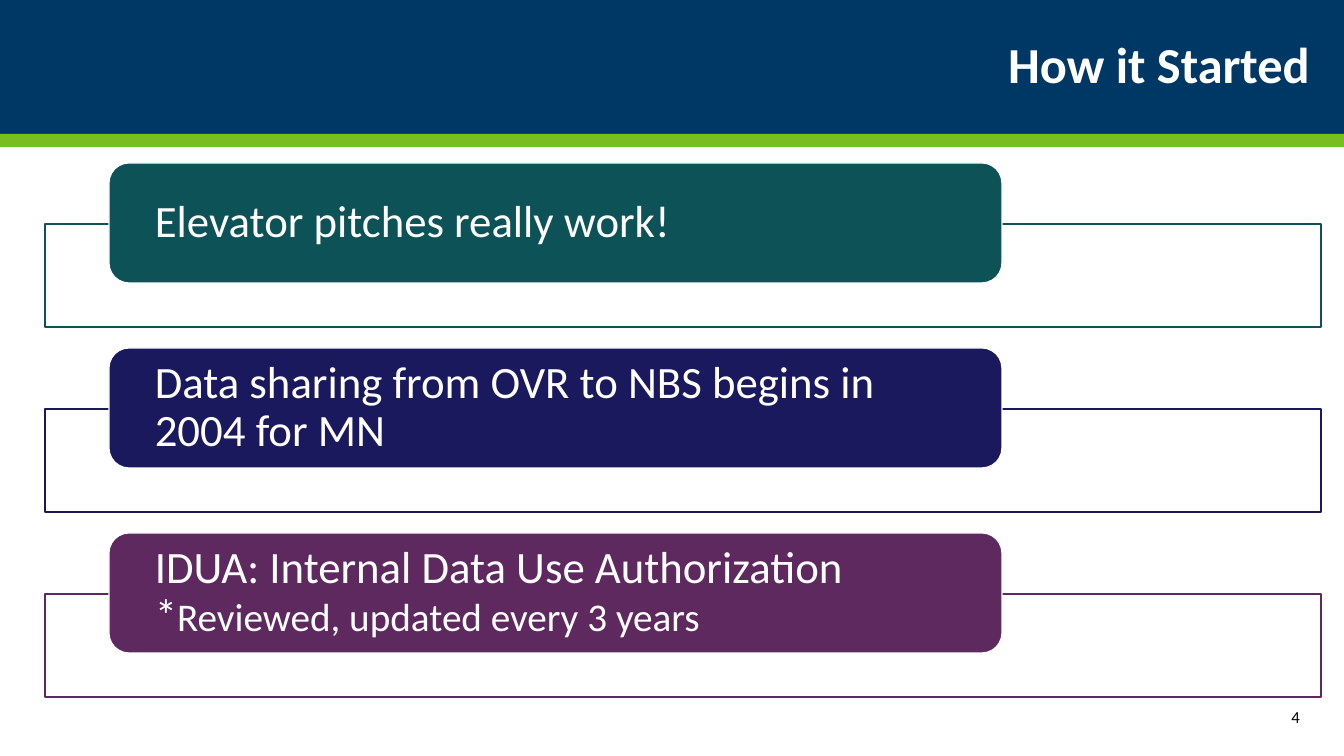
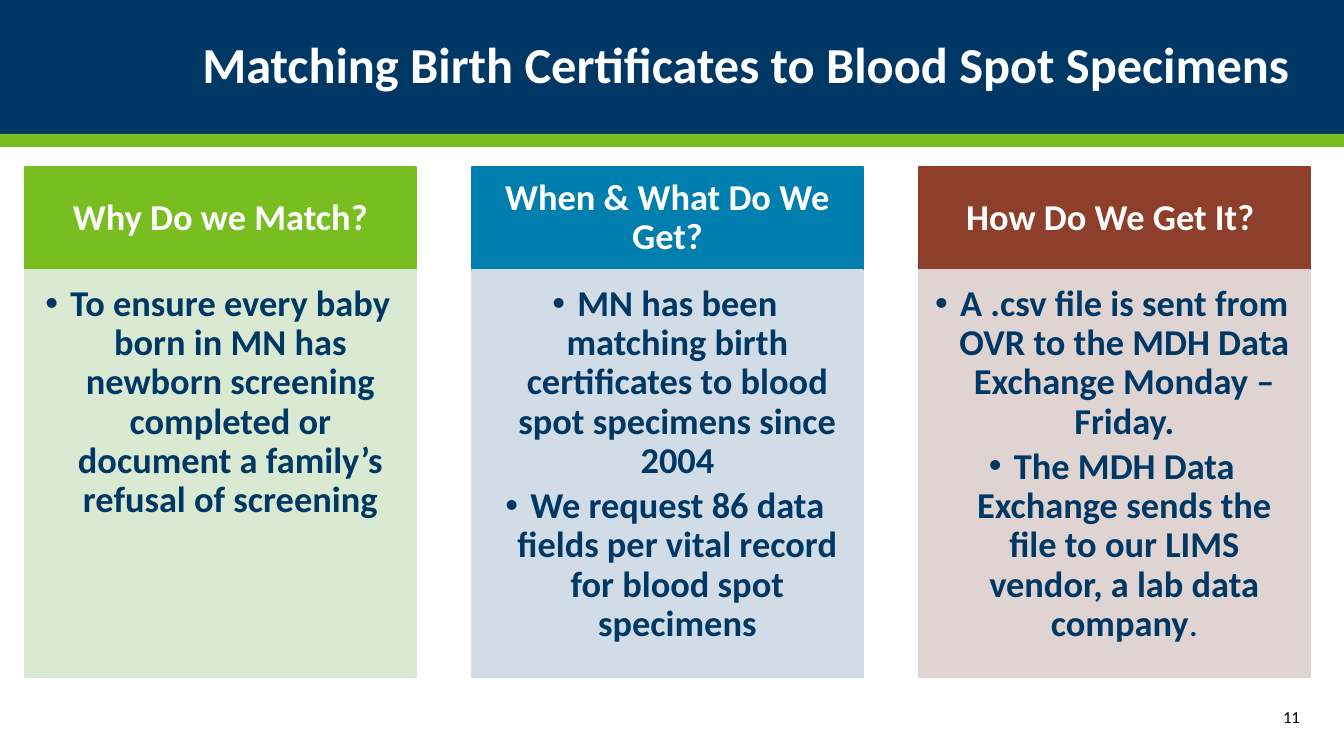
from lxml.etree import SubElement
from pptx import Presentation
from pptx.dml.color import RGBColor
from pptx.enum.shapes import MSO_SHAPE
from pptx.enum.text import MSO_ANCHOR, PP_ALIGN
from pptx.oxml.ns import qn
from pptx.util import Emu, Pt

WIDTH, HEIGHT = 1344, 756
SCALE = 12192000 / WIDTH
FONT = "Calibri"

NAVY = RGBColor(0x00, 0x38, 0x65)
GREEN = RGBColor(0x78, 0xBE, 0x21)
TEAL = RGBColor(0x0D, 0x52, 0x57)
INDIGO = RGBColor(0x1A, 0x19, 0x5D)
PLUM = RGBColor(0x5D, 0x29, 0x5F)
BLUE = RGBColor(0x00, 0x7F, 0xAF)
RUST = RGBColor(0x8D, 0x3F, 0x2B)
PALE_GREEN = RGBColor(0xDA, 0xEA, 0xD2)
PALE_BLUE = RGBColor(0xD1, 0xDC, 0xE6)
PALE_RUST = RGBColor(0xDF, 0xD4, 0xD2)
WHITE = RGBColor(0xFF, 0xFF, 0xFF)
BLACK = RGBColor(0x00, 0x00, 0x00)


def add_block(page, area, fill=None, line=None, kind=MSO_SHAPE.RECTANGLE):
    """Add a shape at area (left, top, width, height in px); no fill gives a text box."""
    left, top, width, height = [Emu(round(value * SCALE)) for value in area]
    if fill is None:
        return page.shapes.add_textbox(left, top, width, height)
    block = page.shapes.add_shape(kind, left, top, width, height)
    block.shadow.inherit = False
    block.fill.solid()
    block.fill.fore_color.rgb = fill
    if line is None:
        block.line.fill.background()
    else:
        block.line.color.rgb = line
        block.line.width = Pt(0.85)
    return block


def write(box, paragraphs, color, align, insets, bold=False, bullets=False,
          anchor=MSO_ANCHOR.MIDDLE):
    """Fill a box with paragraphs, each a list of (text, size) spans."""
    frame = box.text_frame
    frame.word_wrap = True
    frame.vertical_anchor = anchor
    (frame.margin_left, frame.margin_top, frame.margin_right,
     frame.margin_bottom) = [Emu(round(value * SCALE)) for value in insets]
    for index, spans in enumerate(paragraphs):
        para = frame.add_paragraph() if index else frame.paragraphs[0]
        if bullets:
            properties = para._p.get_or_add_pPr()
            properties.set("marL", str(round(25 * SCALE)))
            properties.set("indent", str(round(-25 * SCALE)))
            SubElement(properties, qn("a:buFont"), typeface="Arial")
            SubElement(properties, qn("a:buChar"), char="•")
            para.space_after = Pt(4)
        para.alignment = align
        para.line_spacing = 0.9
        for text, size in spans:
            span = para.add_run()
            span.text = text
            span.font.name = FONT
            span.font.size = Pt(size)
            span.font.bold = bold
            span.font.color.rgb = color


deck = Presentation()
deck.slide_width = Emu(round(WIDTH * SCALE))
deck.slide_height = Emu(round(HEIGHT * SCALE))

# Shared header, title and page number: title, right edge of title, number
pages = []
for title, title_right, number in [
    ("How it Started", 1310, "4"),
    ("Matching Birth Certificates to Blood Spot Specimens", 1290, "11"),
]:
    page = deck.slides.add_slide(deck.slide_layouts[6])
    add_block(page, (0, 0, WIDTH, 134), NAVY)
    add_block(page, (0, 134, WIDTH, 13), GREEN)
    write(add_block(page, (0, 0, title_right, 134)), [[(title, 36)]],
          WHITE, PP_ALIGN.RIGHT, (0, 5, 0, 5), bold=True)
    write(add_block(page, (1149, 698, 161, 40)), [[(number, 12)]],
          BLACK, PP_ALIGN.RIGHT, (10, 5, 10, 5))
    pages.append(page)
start_page, matching_page = pages

# How it Started: three coloured bars, each over an outlined frame
milestones = [
    (TEAL, [[("Elevator pitches really work!", 32)]]),
    (INDIGO, [[("Data sharing from OVR to NBS begins in 2004 for MN", 32)]]),
    (PLUM, [[("IDUA: Internal Data Use Authorization", 32)],
            [("*", 32), ("Reviewed, updated every 3 years", 28)]]),
]
for row, (color, paragraphs) in enumerate(milestones):
    top = 163 + row * 185
    add_block(start_page, (45, top + 61, 1276, 103), WHITE, color)
    bar = add_block(start_page, (109, top, 893, 120), color, WHITE,
                    MSO_SHAPE.ROUNDED_RECTANGLE)
    write(bar, paragraphs, WHITE, PP_ALIGN.LEFT, (40, 0, 40, 0))

# Matching: three columns, each a heading over a bulleted panel
columns = [
    (GREEN, PALE_GREEN, "Why Do we Match?",
     ["To ensure every baby born in MN has newborn screening completed or "
      "document a family’s refusal of screening"]),
    (BLUE, PALE_BLUE, "When & What Do We Get?",
     ["MN has been matching birth certificates to blood spot specimens since 2004",
      "We request 86 data fields per vital record for blood spot specimens"]),
    (RUST, PALE_RUST, "How Do We Get It? ",
     ["A .csv file is sent from OVR to the MDH Data Exchange Monday – Friday.",
      "The MDH Data Exchange sends the file to our LIMS vendor, a lab data company."]),
]
for index, (color, pale, heading, points) in enumerate(columns):
    left = 25 + index * 447
    header = add_block(matching_page, (left, 167, 391, 103), color, color)
    write(header, [[(heading, 26)]], WHITE, PP_ALIGN.CENTER,
          (20, 12, 20, 12), bold=True)
    panel = add_block(matching_page, (left, 270, 391, 407), pale, pale)
    write(panel, [[(point, 26)] for point in points], NAVY, PP_ALIGN.CENTER,
          (15, 15, 20, 23), bold=True, bullets=True, anchor=MSO_ANCHOR.TOP)
    panel.text_frame.paragraphs[-1].space_after = Pt(0)

# The closing full stop of the last column is in regular weight
last_para = panel.text_frame.paragraphs[-1]
sentence = last_para.runs[0]
sentence.text = sentence.text.rstrip(".")
stop = last_para.add_run()
stop.text = "."
stop.font.name = FONT
stop.font.size = Pt(26)
stop.font.color.rgb = NAVY

deck.save("out.pptx")
